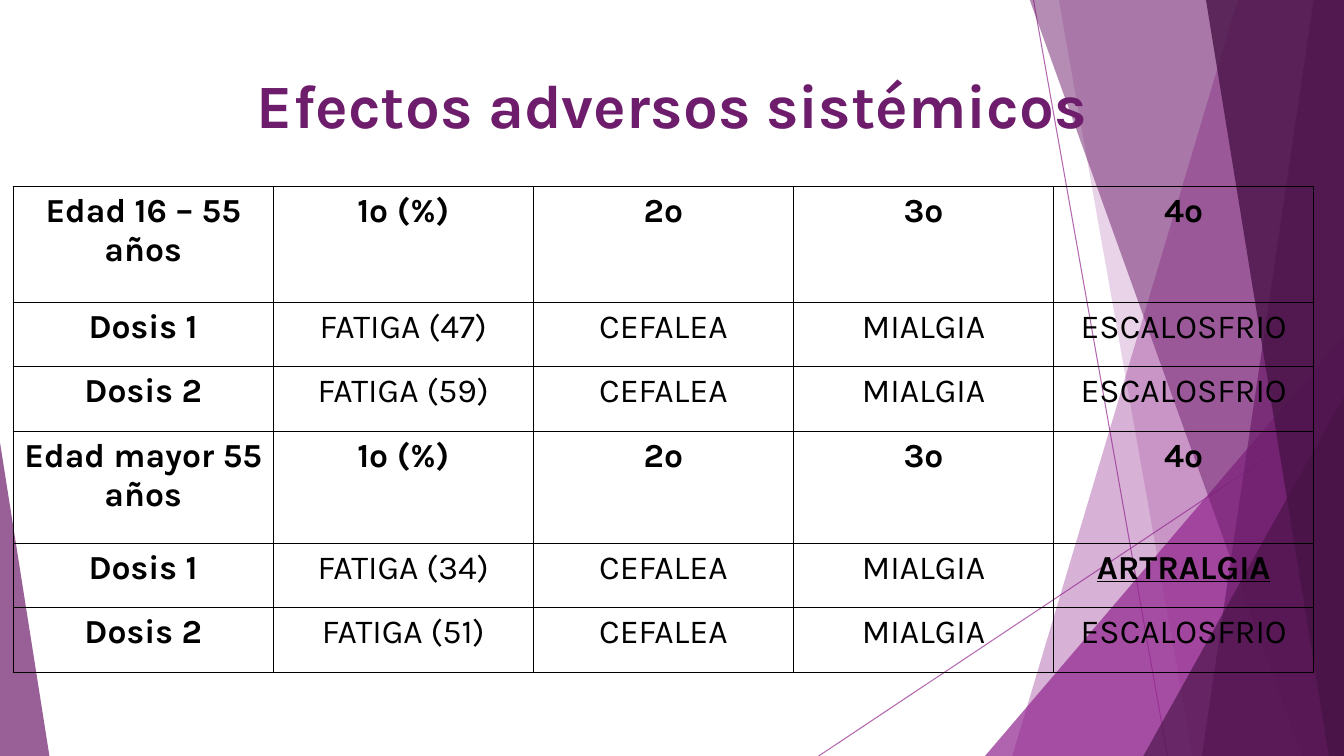
from lxml.etree import SubElement
from pptx import Presentation
from pptx.dml.color import RGBColor
from pptx.enum.shapes import MSO_CONNECTOR as Connector, MSO_SHAPE as Shape
from pptx.enum.text import MSO_ANCHOR as Anchor, PP_ALIGN as Align
from pptx.oxml import parse_xml
from pptx.oxml.ns import nsdecls, qn
from pptx.util import Inches, Pt

COLORS = {"violet": "92278F", "plum": "6D1D6B", "dark": "491447", "black": "000000"}
FONT = "Karla"
WIDTH, HEIGHT = 13.33, 7.5

RANKS = ["1º (%)", "2º", "3º", "4º"]
ROWS = [
    ["Edad 16 – 55 años", *RANKS],
    ["Dosis 1", "FATIGA (47)", "CEFALEA", "MIALGIA", "ESCALOSFRIO"],
    ["Dosis 2", "FATIGA (59)", "CEFALEA", "MIALGIA", "ESCALOSFRIO"],
    ["Edad mayor 55 años", *RANKS],
    ["Dosis 1", "FATIGA (34)", "CEFALEA", "MIALGIA", "ARTRALGIA"],
    ["Dosis 2", "FATIGA (51)", "CEFALEA", "MIALGIA", "ESCALOSFRIO"],
]
ROW_HEIGHTS = [1.15, 0.64, 0.64, 1.11, 0.64, 0.64]
COLUMN_WIDTH = 2.58
AGE_ROWS = (0, 3)
HIGHLIGHT = "ARTRALGIA"


def set_alpha(fill_parent, percent):
    """Make the solid colour under an element partly transparent."""
    color = next(fill_parent.iter(qn("a:srgbClr")))
    SubElement(color, qn("a:alpha"), val=str(percent * 1000))


def paint(facet, color, opacity):
    """Give a facet a translucent fill without line or shadow."""
    facet.shadow.inherit = False
    facet.fill.solid()
    facet.fill.fore_color.rgb = RGBColor.from_string(COLORS[color])
    facet.line.fill.background()
    set_alpha(facet.fill._xPr, opacity)


def add_ray(slide, start, end):
    """Draw a thin translucent line."""
    ray = slide.shapes.add_connector(
        Connector.STRAIGHT, *(Inches(value) for value in (*start, *end)))
    ray.line.color.rgb = RGBColor.from_string(COLORS["violet"])
    ray.line.width = Pt(0.75)
    properties = ray._element.spPr
    set_alpha(properties, 70)
    SubElement(properties, qn("a:effectLst"))


def add_band(slide, top_x, bottom_x, color, opacity):
    """Draw a band that runs from a slanted edge to the right of the slide."""
    top = -0.01
    corners = [(WIDTH, top), (WIDTH, HEIGHT), (bottom_x, HEIGHT)]
    outline = slide.shapes.build_freeform(Inches(top_x), Inches(top))
    outline.add_line_segments([(Inches(x), Inches(y)) for x, y in corners])
    paint(outline.convert_to_shape(), color, opacity)


def add_triangle(slide, left, top, width, apex, color, opacity):
    """Draw a triangle standing on the bottom edge of the slide."""
    triangle = slide.shapes.add_shape(
        Shape.ISOSCELES_TRIANGLE, Inches(left), Inches(top),
        Inches(width), Inches(HEIGHT - top))
    triangle.adjustments[0] = apex
    paint(triangle, color, opacity)


def write(frame, text, size, color, bold, underline=False):
    """Put one centred run into a text frame and return its paragraph."""
    paragraph = frame.paragraphs[0]
    paragraph.alignment = Align.CENTER
    run = paragraph.add_run()
    run.text = text
    run.font.name = FONT
    run.font.size = Pt(size)
    run.font.bold = bold
    run.font.underline = underline
    run.font.color.rgb = RGBColor.from_string(COLORS[color])
    return paragraph


def add_title(slide, text):
    """Add the slide heading."""
    frame = slide.shapes.add_textbox(
        Inches(0.49), Inches(0.35), Inches(12.36), Inches(1.45)).text_frame
    frame.word_wrap = True
    frame.vertical_anchor = Anchor.MIDDLE
    write(frame, text, 44, "plum", True).line_spacing = 0.9


def add_borders(cell):
    """Outline a cell in black on all four sides."""
    for index, side in enumerate(("lnL", "lnR", "lnT", "lnB")):
        border = parse_xml(
            f'<a:{side} {nsdecls("a")} w="12700"><a:solidFill>'
            f'<a:srgbClr val="{COLORS["black"]}"/></a:solidFill></a:{side}>')
        cell._tc.get_or_add_tcPr().insert(index, border)


def add_effects_table(slide):
    """Add the table of effects by age group and dose."""
    columns = len(ROWS[0])
    table = slide.shapes.add_table(
        len(ROWS), columns, Inches(0.13), Inches(1.85),
        Inches(COLUMN_WIDTH * columns), Inches(sum(ROW_HEIGHTS))).table
    table.first_row = table.horz_banding = False
    for column in table.columns:
        column.width = Inches(COLUMN_WIDTH)
    for r, (texts, height) in enumerate(zip(ROWS, ROW_HEIGHTS)):
        table.rows[r].height = Inches(height)
        for c, text in enumerate(texts):
            cell = table.cell(r, c)
            cell.fill.background()
            add_borders(cell)
            marked = text == HIGHLIGHT
            bold = r in AGE_ROWS or c == 0 or marked
            write(cell.text_frame, text, 24, "black", bold, marked)


def add_backdrop(slide):
    """Draw the faceted decoration from back to front."""
    add_ray(slide, (10.25, 0), (11.58, HEIGHT))
    add_ray(slide, (WIDTH, 4.03), (8.12, HEIGHT))
    add_band(slide, 12.28, 10.04, "violet", 36)
    add_band(slide, 10.5, 11.83, "violet", 20)
    add_triangle(slide, 9.77, 3.33, 3.56, 1, "violet", 72)
    add_band(slide, 10.21, 12.91, "plum", 50)
    add_band(slide, 13.03, 11.92, "plum", 70)
    add_band(slide, 11.96, 13.18, "dark", 80)
    add_triangle(slide, 11.34, 3.93, 1.99, 1, "dark", 66)
    add_triangle(slide, 0, 4.39, 0.49, 0, "plum", 70)


def main():
    """Build the slide and save it."""
    deck = Presentation()
    deck.slide_width, deck.slide_height = Inches(WIDTH), Inches(HEIGHT)
    slide = deck.slides.add_slide(deck.slide_layouts[6])
    add_backdrop(slide)
    add_title(slide, "Efectos adversos sistémicos")
    add_effects_table(slide)
    deck.save("out.pptx")


if __name__ == "__main__":
    main()
